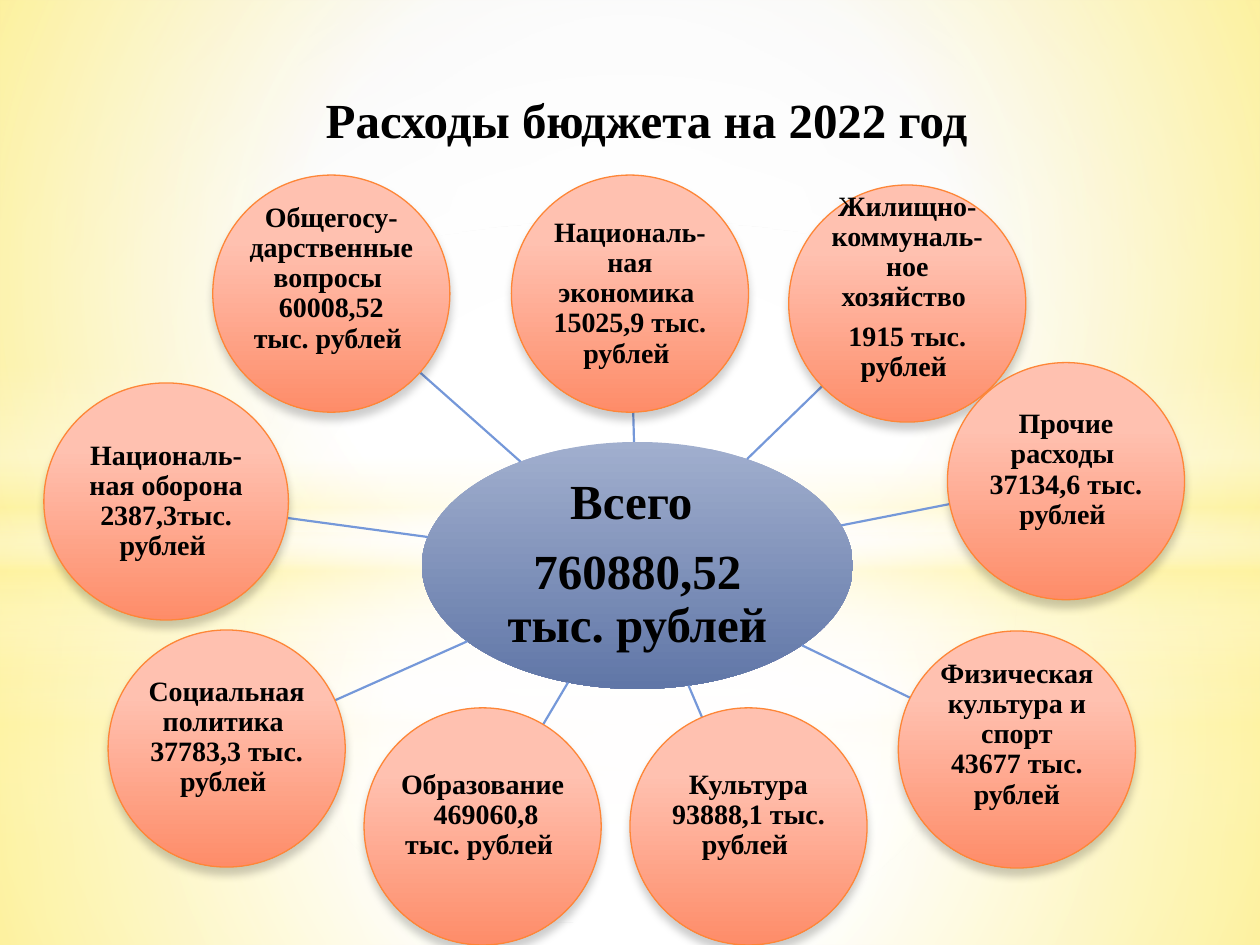
from math import hypot

from pptx import Presentation
from pptx.dml.color import RGBColor
from pptx.enum.shapes import MSO_CONNECTOR as Link, MSO_SHAPE as Form
from pptx.enum.text import MSO_ANCHOR as Anchor, PP_ALIGN as Align
from pptx.oxml import parse_xml
from pptx.oxml.ns import nsdecls, qn
from pptx.util import Cm, Pt

BLACK = RGBColor(0x00, 0x00, 0x00)
WHITE = RGBColor(0xFF, 0xFF, 0xFF)
GREY = RGBColor(0xD1, 0xD1, 0xD1)
CREAM = RGBColor(0xFF, 0xF3, 0x9D)
PALE = RGBColor(0xA1, 0xAF, 0xCE)
NAVY = RGBColor(0x60, 0x76, 0xA7)
BLUE = RGBColor(0x75, 0x98, 0xD9)
ROSE = RGBColor(0xFF, 0xC1, 0xB0)
CORAL = RGBColor(0xFE, 0x8C, 0x69)
RUST = RGBColor(0xFE, 0x86, 0x37)

WIDE, HIGH = 25.4, 19.05
DISC = 4.78
HUB = (12.85, 11.4, 8.69, 4.98)
DOWN = '<a:lin ang="5400000" scaled="0"/>'

ITEMS = [
    (6.68, 5.92, DISC, 0.6, 0, ["Общегосу-дарственные вопросы ", "60008,52 тыс. рублей "]),
    (3.35, 10.11, 4.93, 0, 0, ["Националь-ная оборона", "2387,3тыс. рублей "]),
    (18.29, 6.12, DISC, 0.65, 5.6, ["Жилищно-коммуналь-ное хозяйство ", "1915 тыс. рублей "]),
    (21.49, 9.7, DISC, 0.45, 0, ["Прочие расходы ", "37134,6 тыс. рублей "]),
    (20.5, 15.11, DISC, 0.6, 0, ["Физическая культура и спорт", "43677 тыс. рублей"]),
    (15.09, 16.66, DISC, 0.45, 0, ["Культура", "93888,1 тыс. рублей "]),
    (9.73, 16.66, DISC, 0.45, 0, ["Образование", " 469060,8 тыс. рублей "]),
    (4.57, 15.09, DISC, 0.45, 0, ["Социальная политика ", "37783,3 тыс. рублей "]),
    (12.7, 5.92, DISC, 0, 0, ["Националь-ная экономика ", "15025,9 тыс. рублей "]),
]


def round_to(left, top, right, low):
    sides = zip("ltrb", (left, top, right, low))
    rect = " ".join(f'{side}="{part * 1000}"' for side, part in sides)
    return f'<a:path path="circle"><a:fillToRect {rect}/></a:path>'


MID = round_to(50, 50, 50, 50)


class Deck:
    font = "Times New Roman"

    def __init__(self):
        self.show = Presentation()
        self.show.slide_width, self.show.slide_height = Cm(WIDE), Cm(HIGH)
        self.slide = self.show.slides.add_slide(self.show.slide_layouts[6])
        self.shapes = self.slide.shapes

    def blend(self, fill, root, stops, way):
        fill.gradient()
        old = root.find(".//" + qn("a:gradFill"))
        marks = "".join(
            f'<a:gs pos="{pos * 1000}"><a:srgbClr val="{tone}">'
            f'<a:alpha val="{alpha * 1000}"/></a:srgbClr></a:gs>'
            for pos, tone, alpha in stops)
        new = parse_xml(f'<a:gradFill {nsdecls("a")} rotWithShape="1">'
                        f'<a:gsLst>{marks}</a:gsLst>{way}</a:gradFill>')
        old.getparent().replace(old, new)

    def back(self, stops, way):
        self.blend(self.slide.background.fill, self.slide._element, stops, way)

    def shape(self, form, box, stops, way):
        item = self.shapes.add_shape(form, *map(Cm, box))
        item.shadow.inherit = False
        item.line.fill.background()
        self.blend(item.fill, item._element.spPr, stops, way)
        return item

    def oval(self, x, y, wide, high, stops):
        box = (x - wide / 2, y - high / 2, wide, high)
        return self.shape(Form.OVAL, box, stops, DOWN)

    def disc(self, x, y, wide):
        item = self.oval(x, y, wide, DISC, [(28, ROSE, 100), (100, CORAL, 100)])
        item.line.color.rgb = RUST
        item.line.width = Pt(0.75)
        item._element.spPr.find(qn("a:effectLst")).append(parse_xml(
            f'<a:outerShdw {nsdecls("a")} blurRad="{Pt(5)}" dist="{Pt(4)}" dir="5400000" '
            f'rotWithShape="0"><a:srgbClr val="{BLACK}"><a:alpha val="20000"/>'
            '</a:srgbClr></a:outerShdw>'))
        return item

    def label(self, item, lines, size, gap=0, low=0, inset=0.03, lead=0.9):
        frame = item.text_frame
        frame.word_wrap = True
        frame.vertical_anchor = Anchor.MIDDLE
        frame.margin_left = frame.margin_right = frame.margin_top = Cm(inset)
        frame.margin_bottom = Cm(inset + low)
        frame.text = "\n".join(lines)
        for para in frame.paragraphs:
            para.alignment = Align.CENTER
            para.line_spacing = lead
            para.space_after = Pt(gap)
            for run in para.runs:
                run.font.name = self.font
                run.font.size = Pt(size)
                run.font.bold = True
                run.font.color.rgb = BLACK

    def title(self, text, box):
        item = self.shapes.add_textbox(*map(Cm, box))
        self.label(item, [text], 28, inset=0.13, lead=1)
        item.text_frame.vertical_anchor = Anchor.BOTTOM

    def spoke(self, x, y, wide):
        hub_x, hub_y, hub_w, hub_h = HUB
        dx, dy = x - hub_x, y - hub_y
        near = 1 / hypot(dx / hub_w * 2, dy / hub_h * 2)
        far = 1 - 1 / hypot(dx / wide * 2, dy / DISC * 2)
        ends = [Cm(start + step * part) for part in (near, far)
                for start, step in ((hub_x, dx), (hub_y, dy))]
        line = self.shapes.add_connector(Link.STRAIGHT, *ends)
        line.line.color.rgb = BLUE
        line.line.width = Pt(1.25)
        line._element.spPr.append(parse_xml(f'<a:effectLst {nsdecls("a")}/>'))

    def glow(self, split, band, shift, edge):
        low = [(0, WHITE, 91 + shift), (37, WHITE, 76 + shift), (100, CREAM, 79 + shift)]
        top = [(0, WHITE, 89 + shift), (48, WHITE, 62 + shift), (100, CREAM, 79 + shift)]
        haze = [(0, WHITE, 0), (29, WHITE, 30), (45, CREAM, 40),
                (55, WHITE, 26), (65, CREAM, 60), (100, WHITE, 0)]
        spot = [(0, WHITE, 100), (edge, WHITE, 0)]
        self.shape(Form.RECTANGLE, (0, split, WIDE, HIGH - split), low, MID)
        self.shape(Form.RECTANGLE, (0, 0, WIDE, split), top, MID)
        self.shape(Form.RECTANGLE, (0, band, WIDE, 6.35), haze, DOWN)
        self.shape(Form.OVAL, (0, 4.45, WIDE, 14.17), spot, MID)


def main():
    deck = Deck()
    deck.back([(0, WHITE, 100), (42, WHITE, 100), (100, GREY, 100)],
              round_to(24, 44, 24, 12))
    deck.glow(14.17, 10.46, 0, 56)
    deck.glow(10.74, 7.37, 1, 54)
    hub = deck.oval(*HUB, [(0, PALE, 100), (100, NAVY, 100)])
    deck.label(hub, ["Всего ", "760880,52 тыс. рублей"], 28, gap=9.8, inset=0.05)
    for x, y, wide, low, gap, lines in ITEMS:
        deck.spoke(x, y, wide)
        deck.label(deck.disc(x, y, wide), lines, 16, gap, low)
    deck.title("Расходы бюджета на 2022 год", (0.69, 1.93, 24.69, 1.19))
    deck.show.save("out.pptx")


if __name__ == "__main__":
    main()
